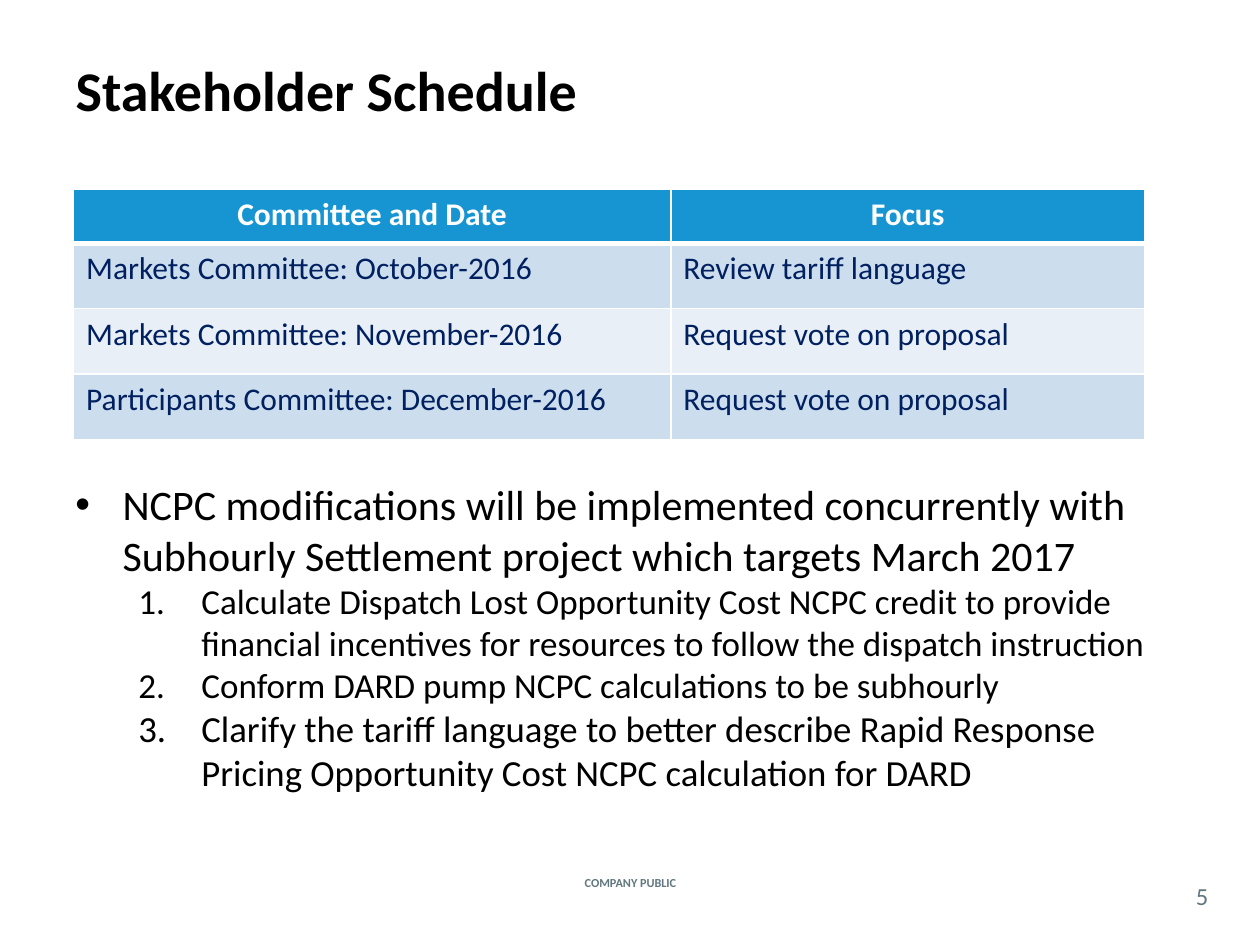
from dataclasses import dataclass
from typing import Optional

import lxml.etree
import pptx
import pptx.dml.color
import pptx.enum.text
import pptx.oxml.ns
import pptx.util

Pt = pptx.util.Pt
Align = pptx.enum.text.PP_ALIGN
Anchor = pptx.enum.text.MSO_ANCHOR
qn = pptx.oxml.ns.qn


@dataclass(frozen=True)
class Theme:
    font: str = "Calibri"
    black: str = "000000"
    white: str = "FFFFFF"
    gray: str = "62777F"
    navy: str = "002060"
    header: str = "1795D2"
    bands: tuple = ("CCDDEE", "E8EFF7")
    title_size: float = 32
    bullet_size: float = 24
    table_size: float = 18
    number_size: float = 14
    footer_size: float = 7


@dataclass(frozen=True)
class Box:
    left: float
    top: float
    width: float
    height: float

    def lengths(self) -> tuple:
        return tuple(Pt(value) for value in (self.left, self.top, self.width, self.height))


@dataclass(frozen=True)
class ListItem:
    text: str
    size: float
    margin: float
    hanging: float
    level: int = 0
    numbered: bool = False


@dataclass(frozen=True)
class Label:
    text: str
    box: Box
    size: float
    bold: bool = False
    inset: Optional[float] = None


THEME = Theme()
TITLE_BOX = Box(36, 6, 648, 90)
BODY_BOX = Box(36, 270, 648, 219.6)
TABLE_BOX = Box(42, 108, 612, 143.3)
COLUMN_WIDTHS = (341.3, 270.7)
HEADER_HEIGHT, ROW_HEIGHT = 31, 37.44
ROWS = (
    ("Committee and Date", "Focus"),
    ("Markets Committee: October-2016", "Review tariff language"),
    ("Markets Committee: November-2016", "Request vote on proposal"),
    ("Participants Committee: December-2016", "Request vote on proposal"),
)
ITEMS = (
    ListItem("NCPC modifications will be implemented concurrently with Subhourly Settlement "
             "project which targets March 2017", THEME.bullet_size, 27, 27),
    *(ListItem(text, size, 72, 36, 1, True) for text, size in (
        ("Calculate Dispatch Lost Opportunity Cost NCPC credit to provide financial incentives "
         "for resources to follow the dispatch instruction", 20),
        ("Conform DARD pump NCPC calculations to be subhourly", 20),
        ("Clarify the tariff language to better describe Rapid Response Pricing Opportunity "
         "Cost NCPC calculation for DARD", 21),
    )),
)
LABELS = (
    Label("COMPANY PUBLIC", Box(307.4, 498.2, 105.8, 12.2), THEME.footer_size, True),
    Label("5", Box(671.8, 501.1, 30.2, 20.9), THEME.number_size, inset=0),
)


def add_run(paragraph, text: str, size: float, color: str, bold: bool = False) -> None:
    run = paragraph.add_run()
    run.text = text
    run.font.name = THEME.font
    run.font.size = Pt(size)
    run.font.bold = bold
    run.font.color.rgb = pptx.dml.color.RGBColor.from_string(color)


def add_title(slide, text: str) -> None:
    title = slide.shapes.title
    title.left, title.top, title.width, title.height = TITLE_BOX.lengths()
    frame = title.text_frame
    frame.auto_size = pptx.enum.text.MSO_AUTO_SIZE.NONE
    frame.vertical_anchor = Anchor.MIDDLE
    paragraph = frame.paragraphs[0]
    paragraph.alignment = Align.LEFT
    add_run(paragraph, text, THEME.title_size, THEME.black, True)


def add_label(slide, label: Label) -> None:
    frame = slide.shapes.add_textbox(*label.box.lengths()).text_frame
    frame.word_wrap = True
    frame.vertical_anchor = Anchor.MIDDLE
    if label.inset is not None:
        frame.margin_left = frame.margin_right = Pt(label.inset)
        frame.margin_top = frame.margin_bottom = Pt(label.inset)
    paragraph = frame.paragraphs[0]
    paragraph.alignment = Align.CENTER
    add_run(paragraph, label.text, label.size, THEME.gray, label.bold)


def format_list_item(paragraph, item: ListItem) -> None:
    paragraph.level = item.level
    properties = paragraph._p.get_or_add_pPr()
    properties.set("marL", str(Pt(item.margin)))
    properties.set("indent", str(-Pt(item.hanging)))
    if item.numbered:
        lxml.etree.SubElement(properties, qn("a:buFont"), typeface="+mj-lt")
        lxml.etree.SubElement(properties, qn("a:buAutoNum"), type="arabicPeriod")
    else:
        lxml.etree.SubElement(properties, qn("a:buFont"), typeface="Arial")
        lxml.etree.SubElement(properties, qn("a:buChar"), char="•")


def add_list(slide, items: tuple) -> None:
    frame = slide.shapes.add_textbox(*BODY_BOX.lengths()).text_frame
    frame.word_wrap = True
    for index, item in enumerate(items):
        paragraph = frame.add_paragraph() if index else frame.paragraphs[0]
        format_list_item(paragraph, item)
        add_run(paragraph, item.text, item.size, THEME.black)


def set_borders(cell, top: float, bottom: float) -> None:
    properties = cell._tc.get_or_add_tcPr()
    widths = {"a:lnL": 1, "a:lnR": 1, "a:lnT": top, "a:lnB": bottom}
    for index, (tag, width) in enumerate(widths.items()):
        line = properties.makeelement(qn(tag), {"w": str(Pt(width))})
        fill = lxml.etree.SubElement(line, qn("a:solidFill"))
        lxml.etree.SubElement(fill, qn("a:srgbClr"), val=THEME.white)
        properties.insert(index, line)


def add_schedule(slide) -> None:
    table = slide.shapes.add_table(len(ROWS), len(COLUMN_WIDTHS), *TABLE_BOX.lengths()).table
    for column, width in zip(table.columns, COLUMN_WIDTHS):
        column.width = Pt(width)
    for row_index, texts in enumerate(ROWS):
        is_header = row_index == 0
        table.rows[row_index].height = Pt(HEADER_HEIGHT if is_header else ROW_HEIGHT)
        fill = THEME.header if is_header else THEME.bands[(row_index - 1) % 2]
        for column_index, text in enumerate(texts):
            cell = table.cell(row_index, column_index)
            cell.fill.solid()
            cell.fill.fore_color.rgb = pptx.dml.color.RGBColor.from_string(fill)
            set_borders(cell, 3 if row_index == 1 else 1, 3 if is_header else 1)
            paragraph = cell.text_frame.paragraphs[0]
            paragraph.alignment = Align.CENTER if is_header else Align.LEFT
            add_run(paragraph, text, THEME.table_size,
                    THEME.white if is_header else THEME.navy, is_header)


def main() -> None:
    presentation = pptx.Presentation()
    presentation.slide_width, presentation.slide_height = Pt(720), Pt(540)
    slide = presentation.slides.add_slide(presentation.slide_layouts.get_by_name("Title Only"))
    for label in LABELS:
        add_label(slide, label)
    add_title(slide, "Stakeholder Schedule")
    add_list(slide, ITEMS)
    add_schedule(slide)
    presentation.save("out.pptx")


if __name__ == "__main__":
    main()
